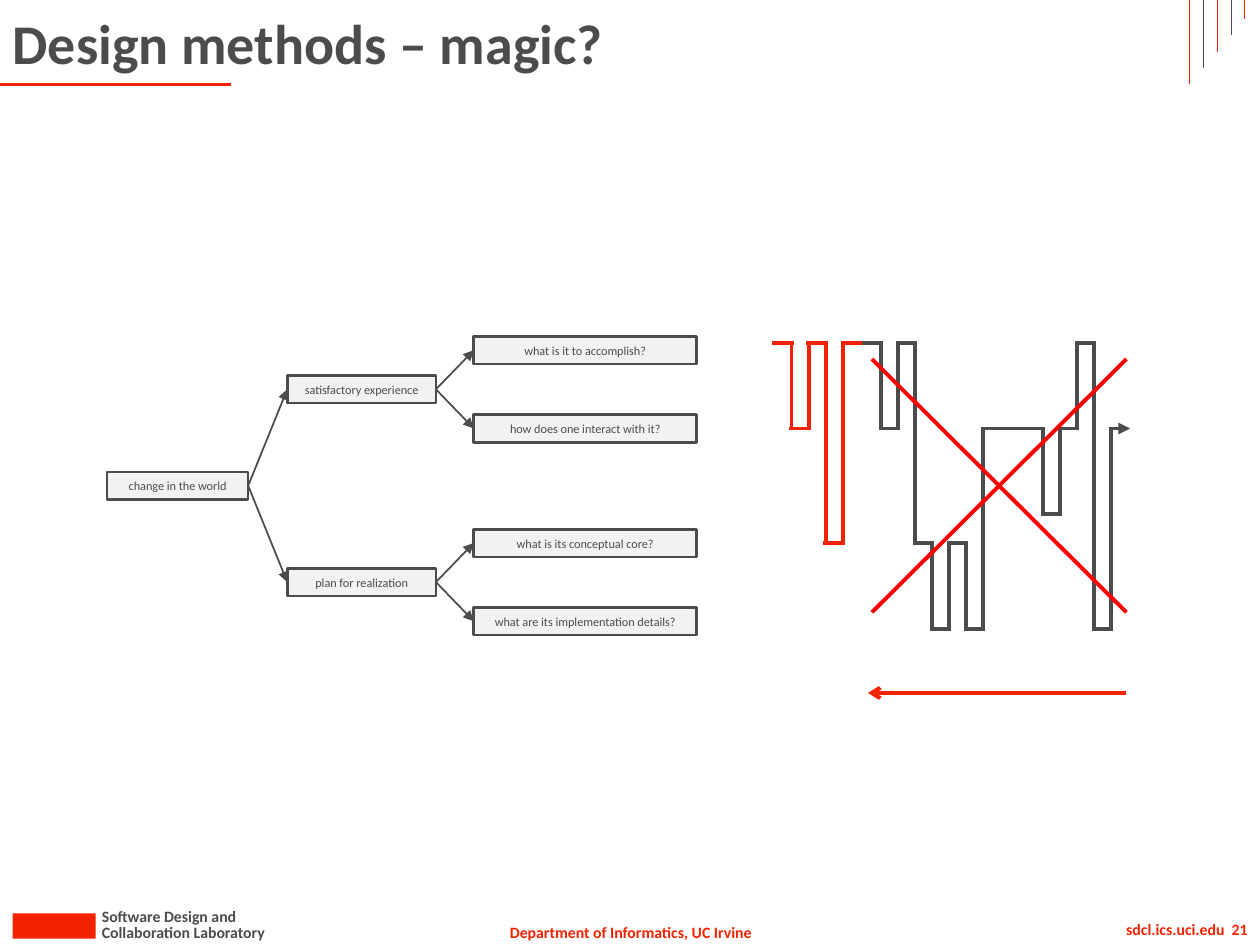
import dataclasses
import itertools

import pptx
import pptx.dml.color
import pptx.enum.shapes
import pptx.enum.text
import pptx.oxml.ns
import pptx.util
from lxml import etree

Inches = pptx.util.Inches
Pt = pptx.util.Pt
ALIGN = pptx.enum.text.PP_ALIGN
MIDDLE = pptx.enum.text.MSO_ANCHOR.MIDDLE


@dataclasses.dataclass(frozen=True)
class Theme:
    font: str = "Calibri"
    red: str = "F32200"
    cross: str = "FF0000"
    gray: str = "4C4C4C"
    pale: str = "F2F2F2"
    title: float = 32
    footer: float = 9
    node: float = 7
    hairline: float = 0.5
    thin: float = 1
    medium: float = 1.5
    thick: float = 2.25


THEME = Theme()


def rgb(value):
    return pptx.dml.color.RGBColor.from_string(value)


def add_run(tf, text, size, color, bold=False, align=ALIGN.LEFT):
    p = tf.paragraphs[0]
    p.alignment = align
    r = p.add_run()
    r.text = text
    r.font.name = THEME.font
    r.font.size = Pt(size)
    r.font.bold = bold
    r.font.color.rgb = rgb(color)


def add_line(s, x1, y1, x2, y2, color, width, head=None):
    """Draw a straight line; head names the arrowhead at its end."""
    line = s.shapes.add_connector(
        pptx.enum.shapes.MSO_CONNECTOR.STRAIGHT,
        Inches(x1), Inches(y1), Inches(x2), Inches(y2))
    line.line.color.rgb = rgb(color)
    line.line.width = Pt(width)
    qn = pptx.oxml.ns.qn
    if head:
        etree.SubElement(line.line._get_or_add_ln(), qn("a:tailEnd"), type=head)
    etree.SubElement(line._element.spPr, qn("a:effectLst"))
    return line


def add_block(s, x, y, w, h, fill):
    """Add a plain filled rectangle without shadow or outline."""
    sp = s.shapes.add_shape(
        pptx.enum.shapes.MSO_SHAPE.RECTANGLE, Inches(x), Inches(y), Inches(w), Inches(h))
    sp.shadow.inherit = False
    sp.fill.solid()
    sp.fill.fore_color.rgb = rgb(fill)
    sp.line.fill.background()
    return sp


def add_label(s, box, text, color, align=ALIGN.LEFT, wrap=False):
    sp = s.shapes.add_textbox(*map(Inches, box))
    sp.text_frame.word_wrap = wrap
    add_run(sp.text_frame, text, THEME.footer, color, True, align)


def add_header(s, x, y, w, h):
    title = s.shapes.title
    title.left, title.top = Inches(x), Inches(y)
    title.width, title.height = Inches(9), Inches(h)
    title.text_frame.vertical_anchor = MIDDLE
    add_run(title.text_frame, "Design methods – magic?", THEME.title, THEME.gray, True)
    add_line(s, x, y + h, x + 1.83, y + h, THEME.red, THEME.medium)
    for i in range(5):
        bar_x = x + w - 0.56 + i * 0.11
        color = THEME.gray if i in (1, 3) else THEME.red
        add_line(s, bar_x, y + h - i * 0.13, bar_x, y, color, THEME.hairline)


def add_footer(s, x, y, w):
    add_block(s, x + 0.1, y + 0.17, 0.66, 0.2, THEME.red)
    add_label(s, (x + 0.71, y + 0.07, 1.29, 0.25), "Software Design and", THEME.gray)
    add_label(s, (x + 0.71, y + 0.19, 1.53, 0.25), "Collaboration Laboratory", THEME.gray)
    add_label(s, (x + 3.93, y + 0.19, 2.15, 0.25), "Department of Informatics, UC Irvine",
              THEME.red, ALIGN.CENTER)
    add_label(s, (x + w - 2.16, y + 0.17, 2.16, 0.25), "sdcl.ics.uci.edu  21",
              THEME.red, ALIGN.RIGHT, wrap=True)


def add_node(s, x, y, w, h, text):
    sp = add_block(s, x, y, w, h, THEME.pale)
    sp.line.color.rgb = rgb(THEME.gray)
    sp.line.width = Pt(THEME.medium)
    tf = sp.text_frame
    tf.word_wrap = True
    tf.vertical_anchor = MIDDLE
    add_run(tf, text, THEME.node, THEME.gray, align=ALIGN.CENTER)
    return sp


def join(s, parent, child):
    link = add_line(s, 0, 0, 1, 1, THEME.gray, THEME.thin, "triangle")
    link.begin_connect(parent, 3)
    link.end_connect(child, 1)


def add_question_tree(s, x, y, w, h):
    """Three columns; each parent is centred on its children."""
    node_h = 0.22
    leaf_gap = 0.62
    branch_gap = h - node_h - leaf_gap
    branches = [
        ("satisfactory experience",
         ["what is it to accomplish?", "how does one interact with it?"]),
        ("plan for realization",
         ["what is its conceptual core?", "what are its implementation details?"]),
    ]
    root = add_node(s, x, y + (h - node_h) / 2, 1.12, node_h, "change in the world")
    for i, (name, questions) in enumerate(branches):
        top = y + i * branch_gap
        branch = add_node(s, x + 1.43, top + leaf_gap / 2, 1.18, node_h, name)
        join(s, root, branch)
        for j, question in enumerate(questions):
            leaf = add_node(s, x + w - 1.77, top + j * leaf_gap, 1.77, node_h, question)
            join(s, branch, leaf)


def add_design_path(s, x, y, w, h):
    """Step line over depth levels, given as shares of the height."""
    red_levels = [0, 0.3, 0, 0.7, 0]
    gray_levels = [0, 0.3, 0, 0.7, 1, 0.7, 1, 0.3, 0.3, 0.3, 0.6, 0.3, 0, 1, 0.3]
    levels = red_levels + gray_levels
    # Treads overlap at a riser and meet end to end on a flat stretch.
    pitch = w / 21
    tread = 1.25 * pitch
    for i, (level, following) in enumerate(itertools.zip_longest(levels, levels[1:])):
        color = THEME.red if i < len(red_levels) else THEME.gray
        level_y = y + level * h
        head = "triangle" if following is None else None
        add_line(s, x, level_y, x + tread, level_y, color, THEME.thick, head)
        if following == level:
            x += tread
        elif following is not None:
            x += pitch
            riser_x = x + (tread - pitch) / 2
            add_line(s, riser_x, level_y, riser_x, y + following * h, color, THEME.thick)


def add_rejection(s, x, y, w, h):
    """Cross over the box, with an arrow pointing back below it."""
    add_line(s, x + w, y + h + 0.64, x - 0.03, y + h + 0.64, THEME.red, THEME.thick, "arrow")
    add_line(s, x, y, x + w, y + h, THEME.cross, THEME.thick)
    add_line(s, x, y + h, x + w, y, THEME.cross, THEME.thick)


def main():
    prs = pptx.Presentation()
    prs.slide_width, prs.slide_height = Inches(10), Inches(7.5)
    s = prs.slides.add_slide(prs.slide_layouts[5])
    add_footer(s, 0, 7.08, 10)
    add_header(s, 0, 0, 10, 0.67)
    add_question_tree(s, 0.85, 2.67, 4.68, 2.37)
    add_design_path(s, 6.13, 2.72, 2.84, 2.27)
    add_rejection(s, 6.92, 2.85, 2.02, 2.01)
    prs.save("out.pptx")


if __name__ == "__main__":
    main()
